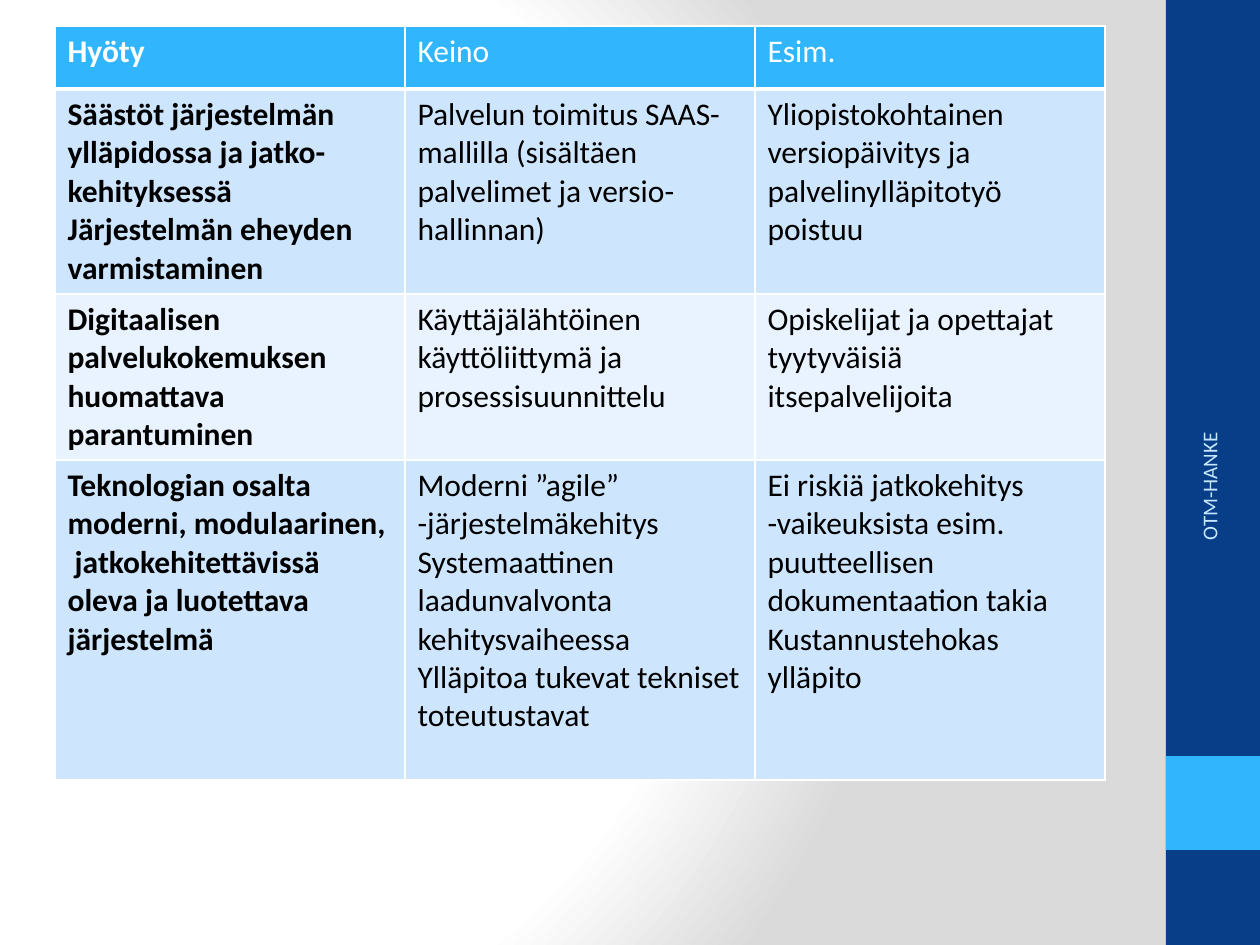
from dataclasses import dataclass

from lxml import etree
from pptx import Presentation
from pptx import util as u
from pptx.dml import color
from pptx.enum import shapes, text
from pptx.oxml import ns, parse_xml

PX = 914400 / 126  # EMU in one px


def px(length):
    return u.Emu(round(length * PX))


@dataclass(frozen=True)
class Theme:
    font: str = "Calibri"
    body_size: int = 18
    footer_size: int = 12
    white: str = "FFFFFF"
    black: str = "000000"
    shade: str = "DADADA"
    navy: str = "073E87"
    accent: str = "31B6FD"
    footer: str = "C6E7FC"
    band_dark: str = "CEE5FE"
    band_light: str = "E8F3FF"


class SlideBuilder:
    def __init__(self, page, theme):
        self.page = page
        self.theme = theme

    def background(self):
        """Radial gradient from white to grey."""
        fill = self.page.background.fill
        fill.solid()
        stops = [(0, self.theme.white), (75, self.theme.white), (100, self.theme.shade)]
        stop_xml = "".join(
            f'<a:gs pos="{pos * 1000}"><a:srgbClr val="{rgb}"/></a:gs>' for pos, rgb in stops
        )
        gradient = parse_xml(
            f'<a:gradFill {ns.nsdecls("a")} rotWithShape="1"><a:gsLst>{stop_xml}</a:gsLst>'
            '<a:path path="circle">'
            '<a:fillToRect l="20000" t="50000" r="100000" b="50000"/></a:path></a:gradFill>'
        )
        solid = next(self.page.element.iter(ns.qn("a:solidFill")))
        solid.getparent().replace(solid, gradient)

    def rectangle(self, left, top, width, height, rgb):
        box = self.page.shapes.add_shape(
            shapes.MSO_SHAPE.RECTANGLE, px(left), px(top), px(width), px(height)
        )
        box.shadow.inherit = False
        box.fill.solid()
        box.fill.fore_color.rgb = color.RGBColor.from_string(rgb)
        box.line.fill.background()

    def format_runs(self, para, size, rgb, bold=False):
        for span in para.runs:
            span.font.name = self.theme.font
            span.font.size = u.Pt(size)
            span.font.bold = bold
            span.font.color.rgb = color.RGBColor.from_string(rgb)

    def vertical_label(self, left, top, width, height, words):
        box = self.page.shapes.add_textbox(px(left), px(top), px(width), px(height))
        box.rotation = 270
        frame = box.text_frame
        frame.word_wrap = True
        frame.vertical_anchor = text.MSO_ANCHOR.MIDDLE
        frame.text = words
        para = frame.paragraphs[0]
        para.alignment = text.PP_ALIGN.RIGHT
        self.format_runs(para, self.theme.footer_size, self.theme.footer)

    def borders(self, cell, bottom):
        properties = cell._tc.get_or_add_tcPr()
        for side, points in (("L", 1), ("R", 1), ("T", 1), ("B", bottom)):
            line = etree.SubElement(properties, ns.qn(f"a:ln{side}"), w=str(u.Pt(points)))
            fill = etree.SubElement(line, ns.qn("a:solidFill"))
            etree.SubElement(fill, ns.qn("a:srgbClr"), val=self.theme.white)

    def table(self, left, top, column_width, row_heights, rows):
        columns = len(rows[0])
        grid = self.page.shapes.add_table(
            len(rows), columns, px(left), px(top),
            px(column_width * columns), px(sum(row_heights)),
        ).table
        for column in grid.columns:
            column.width = px(column_width)
        bands = (self.theme.band_light, self.theme.band_dark)
        for r, (height, row) in enumerate(zip(row_heights, rows)):
            grid.rows[r].height = px(height)
            header = r == 0
            for c, words in enumerate(row):
                cell = grid.cell(r, c)
                self.borders(cell, bottom=3 if header else 1)
                cell.fill.solid()
                cell.fill.fore_color.rgb = color.RGBColor.from_string(
                    self.theme.accent if header else bands[r % 2]
                )
                cell.text_frame.text = words
                for para in cell.text_frame.paragraphs:
                    self.format_runs(
                        para, self.theme.body_size,
                        self.theme.white if header else self.theme.black, bold=c == 0,
                    )


BENEFITS = [
    ("Hyöty", "Keino", "Esim."),
    (
        "Säästöt järjestelmän ylläpidossa ja jatko- kehityksessä\n"
        "Järjestelmän eheyden varmistaminen",
        "Palvelun toimitus SAAS-mallilla (sisältäen palvelimet ja versio-hallinnan)",
        "Yliopistokohtainen versiopäivitys ja palvelinylläpitotyö poistuu",
    ),
    (
        "Digitaalisen palvelukokemuksen huomattava parantuminen",
        "Käyttäjälähtöinen\nkäyttöliittymä ja prosessisuunnittelu",
        "Opiskelijat ja opettajat tyytyväisiä itsepalvelijoita",
    ),
    (
        "Teknologian osalta moderni, modulaarinen,  jatkokehitettävissä "
        "oleva ja luotettava järjestelmä",
        "Moderni ”agile” -järjestelmäkehitys\n"
        "Systemaattinen laadunvalvonta kehitysvaiheessa\n"
        "Ylläpitoa tukevat tekniset toteutustavat",
        "Ei riskiä jatkokehitys -vaikeuksista esim. puutteellisen dokumentaation takia\n"
        "Kustannustehokas ylläpito",
    ),
]


def main():
    deck = Presentation()
    deck.slide_width, deck.slide_height = px(1260), px(945)
    theme = Theme()
    builder = SlideBuilder(deck.slides.add_slide(deck.slide_layouts[6]), theme)

    # Background and side band
    builder.background()
    builder.rectangle(1166, 0, 94, 945, theme.navy)
    builder.rectangle(1166, 756, 94, 94, theme.accent)
    builder.vertical_label(1046, 558, 326, 50, "OTM-HANKE")

    # Benefits table
    builder.table(55, 26, 350, (63, 205, 166, 320), BENEFITS)

    deck.save("out.pptx")


if __name__ == "__main__":
    main()
